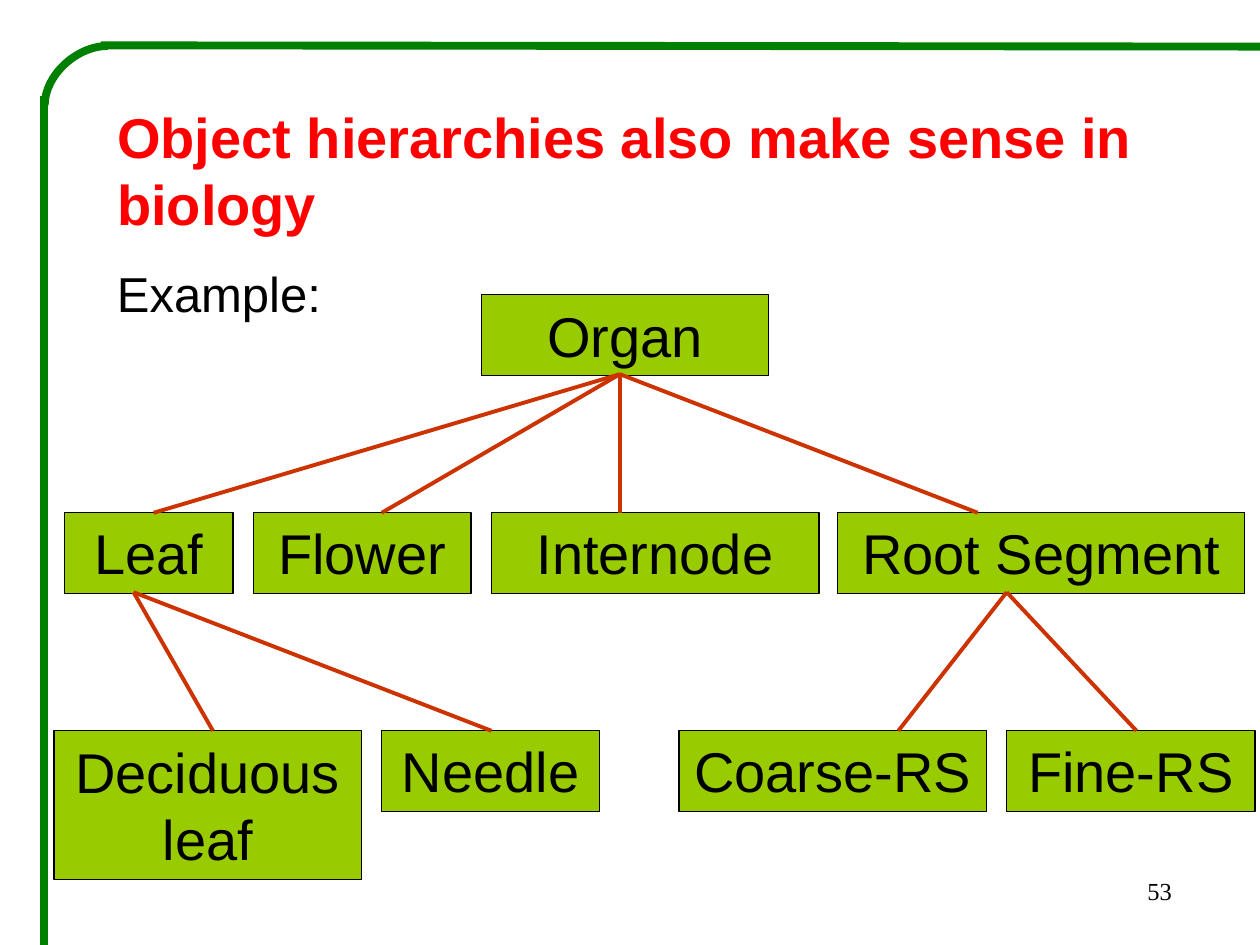
from dataclasses import dataclass

from lxml.etree import SubElement
from pptx import Presentation
from pptx.dml.color import RGBColor
from pptx.enum.shapes import MSO_CONNECTOR, MSO_SHAPE
from pptx.enum.text import MSO_ANCHOR, MSO_AUTO_SIZE, PP_ALIGN
from pptx.oxml.ns import qn
from pptx.util import Inches, Pt

GREEN = RGBColor(0x00, 0x80, 0x00)
LIME = RGBColor(0x99, 0xCC, 0x00)
RUST = RGBColor(0xCC, 0x33, 0x00)
RED = RGBColor(0xFF, 0x00, 0x00)
BLACK = RGBColor(0x00, 0x00, 0x00)

TOP, PITCH, BOX_HEIGHT = 2.34, 1.73, 0.64


@dataclass
class Node:
    """A class box of the hierarchy; lengths are in inches."""
    name: str
    level: int
    left: float
    width: float
    height: float = BOX_HEIGHT

    @property
    def top(self) -> float:
        return TOP + self.level * PITCH


@dataclass
class Fan:
    """Lines from one point under a parent to points above its children."""
    level: int
    parent_x: float
    child_xs: tuple[float, ...]


NODES = [
    Node("Organ", 0, 3.82, 2.28),
    Node("Leaf", 1, 0.51, 1.34),
    Node("Flower", 1, 2.01, 1.73),
    Node("Internode", 1, 3.9, 2.6),
    Node("Root Segment", 1, 6.65, 3.23),
    Node("Deciduous leaf", 2, 0.43, 2.44, 1.18),
    Node("Needle", 2, 3.03, 1.73),
    Node("Coarse-RS", 2, 5.39, 2.44),
    Node("Fine-RS", 2, 7.99, 1.97),
]
FANS = [
    Fan(0, 4.92, (1.22, 3.03, 4.92, 7.76)),
    Fan(1, 1.06, (1.69, 3.9)),
    Fan(1, 7.99, (7.13, 9.02)),
]


def write(s, text: str, size: float, color: RGBColor = BLACK, bold: bool = False,
          align: PP_ALIGN = PP_ALIGN.LEFT, font: str = "Arial") -> None:
    tf = s.text_frame
    tf.word_wrap = True
    tf.auto_size = MSO_AUTO_SIZE.NONE
    tf.vertical_anchor = MSO_ANCHOR.TOP
    p = tf.paragraphs[0]
    p.alignment = align
    r = p.add_run()
    r.text = text
    r.font.name = font
    r.font.size = Pt(size)
    r.font.bold = bold
    r.font.color.rgb = color


def add_line(sp_tree, start: tuple[float, float], end: tuple[float, float],
             color: RGBColor, width: float, kind=MSO_CONNECTOR.STRAIGHT):
    c = sp_tree.add_connector(kind, *(Inches(v) for v in start + end))
    c.line.color.rgb = color
    c.line.width = Pt(width)
    SubElement(c._element.spPr, qn("a:effectLst"))
    return c


def add_node(sp_tree, node: Node) -> None:
    sp = sp_tree.add_shape(MSO_SHAPE.RECTANGLE, Inches(node.left), Inches(node.top),
                           Inches(node.width), Inches(node.height))
    sp.shadow.inherit = False
    sp.fill.solid()
    sp.fill.fore_color.rgb = LIME
    sp.line.color.rgb = BLACK
    sp.line.width = Pt(0.75)
    write(sp, node.name, 32, align=PP_ALIGN.CENTER)


def add_fan(sp_tree, fan: Fan) -> None:
    child_y = TOP + (fan.level + 1) * PITCH
    parent_y = TOP + fan.level * PITCH + BOX_HEIGHT - 0.01
    for x in fan.child_xs:
        add_line(sp_tree, (x, child_y), (fan.parent_x, parent_y), RUST, 2.25)


def add_frame(sp_tree) -> None:
    add_line(sp_tree, (10, 0.37), (0.8, 0.36), GREEN, 4.5)
    add_line(sp_tree, (0.35, 0.76), (0.35, 7.5), GREEN, 4.5)
    # Quarter bend, turned to join the left line to the top line
    corner = add_line(sp_tree, (0.37, 0.35), (0.84, 0.85), GREEN, 4.5,
                      MSO_CONNECTOR.CURVE)
    sp_pr = corner._element.spPr
    sp_pr.find(qn("a:prstGeom")).set("prst", "curvedConnector2")
    sp_pr.find(qn("a:xfrm")).set("rot", str(270 * 60000))


def main() -> None:
    prs = Presentation()
    prs.slide_width, prs.slide_height = Inches(10), Inches(7.5)
    s = prs.slides.add_slide(prs.slide_layouts[5])
    shapes = s.shapes

    # Title and introduction
    title = shapes.title
    title.left, title.top = Inches(0.83), Inches(0.76)
    title.width, title.height = Inches(8.35), Inches(1.17)
    write(title, "Object hierarchies also make sense in biology", 32, RED, bold=True)
    intro = shapes.add_textbox(Inches(0.83), Inches(2.04), Inches(2.5), Inches(0.6))
    write(intro, "Example:", 28)

    # Hierarchy
    for node in NODES:
        add_node(shapes, node)
    for fan in FANS:
        add_fan(shapes, fan)

    # Slide number and green frame
    number = shapes.add_textbox(Inches(7.32), Inches(6.9), Inches(2.08), Inches(0.5))
    write(number, "53", 14, align=PP_ALIGN.RIGHT, font="Times New Roman")
    add_frame(shapes)

    prs.save("out.pptx")


if __name__ == "__main__":
    main()
